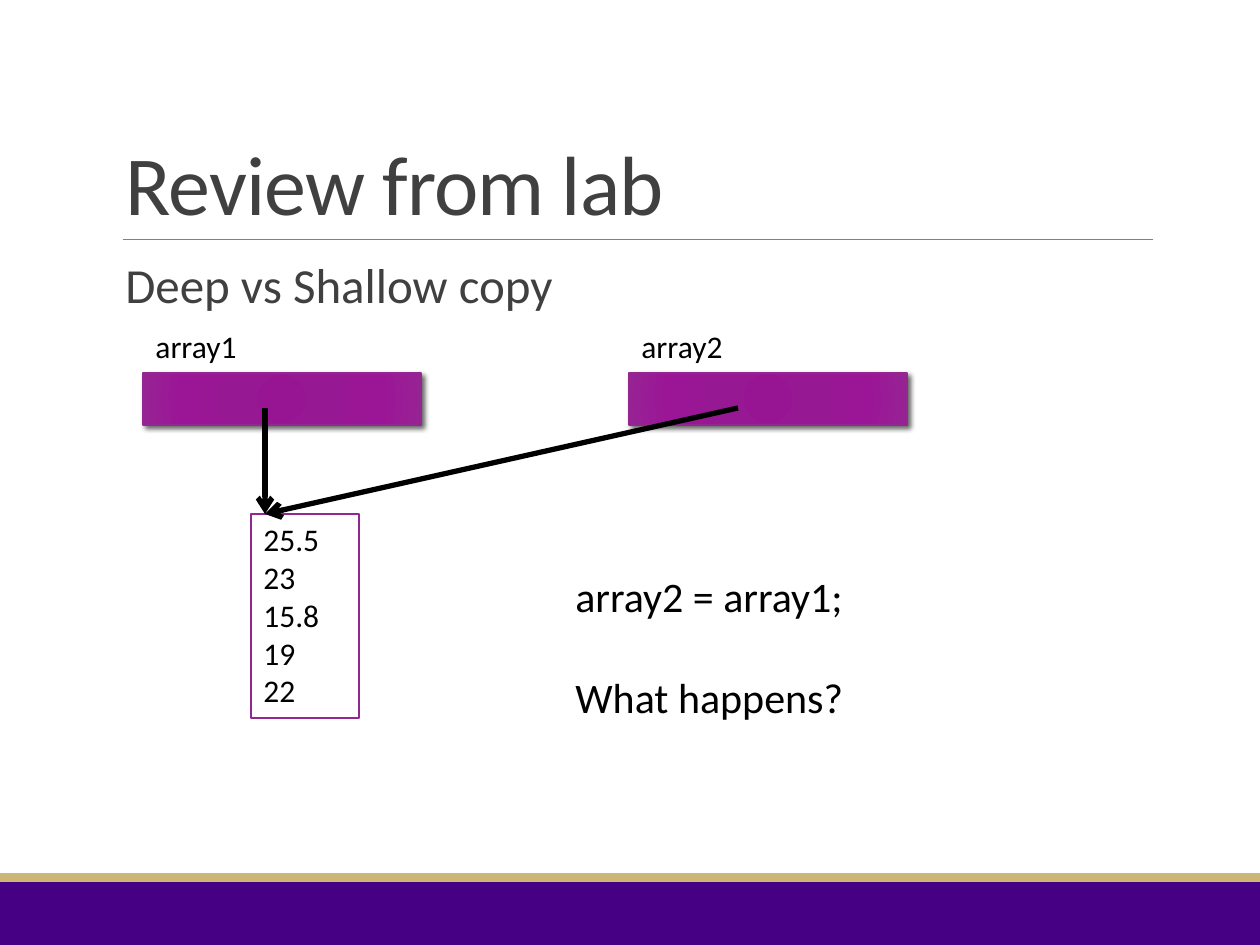
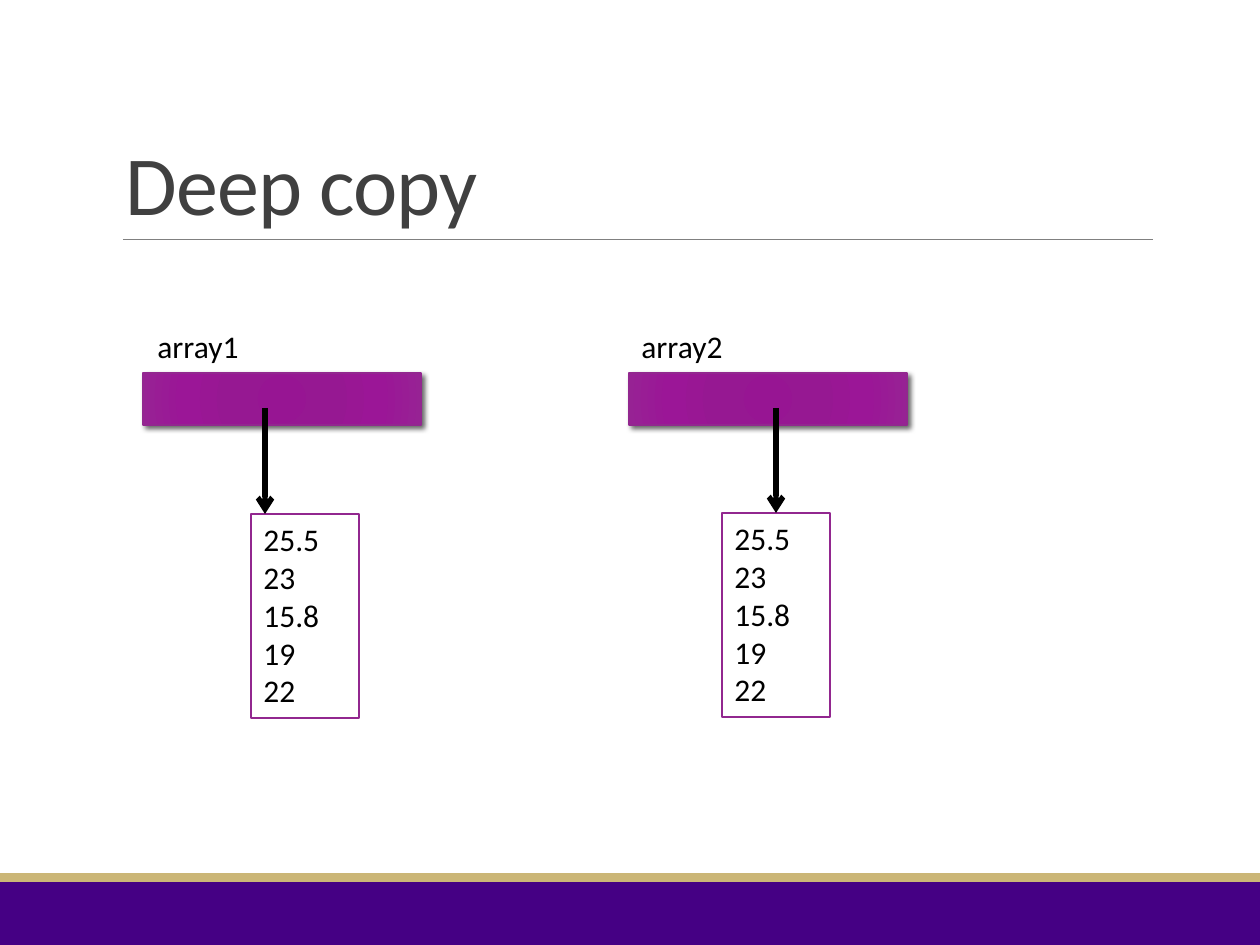
from lxml.etree import SubElement
from pptx import Presentation
from pptx.dml.color import RGBColor
from pptx.enum.shapes import MSO_CONNECTOR, MSO_SHAPE
from pptx.enum.text import MSO_ANCHOR, MSO_AUTO_SIZE, PP_ALIGN
from pptx.oxml import parse_xml
from pptx.oxml.ns import nsdecls, qn
from pptx.util import Pt

EMU_PER_PX = 7257.14
FONT = "Calibri"
COLORS = {
    "band": "450084",
    "stripe": "CBB677",
    "rule": "808080",
    "heading": "404040",
    "text": "000000",
    "outline": "92278F",
}
REFERENCE_GRADIENT = ((0, "971593"), (34, "961892"), (70, "9B1697"), (100, "972294"))
ARRAY_VALUES = ("25.5", "23", "15.8", "19", "22")
SLIDE_WIDTH, SLIDE_HEIGHT = 1260, 945
REFERENCE_TOP, REFERENCE_WIDTH, REFERENCE_HEIGHT = 373, 278, 52
ARRAY1_LEFT, ARRAY2_LEFT = 143, 629
ARROW_TOP, VALUES_TOP = 408, 514
VALUES1_LEFT, VALUES2_LEFT = 251, 722
ARROW1_X = 265


def px(length):
    return round(length * EMU_PER_PX)


def box(*lengths):
    return [px(length) for length in lengths]


def color(name):
    return RGBColor.from_string(COLORS[name])


def format_text(text_frame, size, color_name="text", line_spacing=None):
    for paragraph in text_frame.paragraphs:
        paragraph.alignment = PP_ALIGN.LEFT
        if line_spacing:
            paragraph.line_spacing = line_spacing
        for run in paragraph.runs:
            run.font.name = FONT
            run.font.size = Pt(size)
            run.font.color.rgb = color(color_name)


def add_text(slide, text, bounds, size, color_name="text", line_spacing=None):
    shape = slide.shapes.add_textbox(*box(*bounds))
    text_frame = shape.text_frame
    text_frame.text = text
    text_frame.word_wrap = False
    format_text(text_frame, size, color_name, line_spacing)
    return text_frame


def add_rectangle(slide, bounds, fill=None):
    shape = slide.shapes.add_shape(MSO_SHAPE.RECTANGLE, *box(*bounds))
    shape.shadow.inherit = False
    if fill:
        shape.fill.solid()
        shape.fill.fore_color.rgb = color(fill)
        shape.line.fill.background()
    else:
        shape.fill.background()
    return shape


def add_line(slide, start, end, color_name, width):
    connector = slide.shapes.add_connector(MSO_CONNECTOR.STRAIGHT, *box(*start, *end))
    connector.line.color.rgb = color(color_name)
    connector.line.width = Pt(width)
    SubElement(connector._element.spPr, qn("a:effectLst"))
    return connector


def add_arrow(slide, start, end):
    arrow = add_line(slide, start, end, "text", 3)
    SubElement(arrow.line._get_or_add_ln(), qn("a:tailEnd"), type="arrow")
    return arrow


def add_reference(slide, left):
    shape = add_rectangle(slide, (left, REFERENCE_TOP, REFERENCE_WIDTH, REFERENCE_HEIGHT))
    shape.line.color.rgb = color("outline")
    shape.line.width = Pt(1)
    stops = "".join(
        f'<a:gs pos="{position * 1000}"><a:srgbClr val="{value}"/></a:gs>'
        for position, value in REFERENCE_GRADIENT
    )
    gradient = parse_xml(
        f'<a:gradFill {nsdecls("a")} rotWithShape="1"><a:gsLst>{stops}</a:gsLst>'
        '<a:path path="circle"><a:fillToRect l="100000" t="100000" r="100000" b="100000"/>'
        "</a:path></a:gradFill>"
    )
    properties = shape._element.spPr
    properties.replace(properties.find(qn("a:noFill")), gradient)
    shadow = SubElement(
        properties.find(qn("a:effectLst")), qn("a:outerShdw"),
        blurRad=str(Pt(3)), dist=str(Pt(2)), dir="2700000", rotWithShape="0",
    )
    shadow_color = SubElement(shadow, qn("a:srgbClr"), val=COLORS["text"])
    SubElement(shadow_color, qn("a:alpha"), val="60000")


def add_array(slide, name, left, label_left):
    add_reference(slide, left)
    add_text(slide, name, (label_left, 321, 108, 50), 18)


def add_values(slide, left, top):
    shape = add_rectangle(slide, (left, top, 108, 204))
    shape.line.color.rgb = color("outline")
    shape.line.width = Pt(0.75)
    text_frame = shape.text_frame
    text_frame.text = "\n".join(ARRAY_VALUES)
    text_frame.word_wrap = True
    text_frame.vertical_anchor = MSO_ANCHOR.TOP
    format_text(text_frame, 18)
    return shape


def add_slide(presentation, title_text):
    slide = presentation.slides.add_slide(presentation.slide_layouts[5])
    add_rectangle(slide, (0, 882, SLIDE_WIDTH, 63), "band")
    add_rectangle(slide, (0, 873, SLIDE_WIDTH, 9), "stripe")
    add_line(slide, (123, 239), (1153, 239), "rule", 0.5)
    title = slide.shapes.title
    title.left, title.top, title.width, title.height = box(113, 39, 1040, 200)
    text_frame = title.text_frame
    text_frame.text = title_text
    text_frame.auto_size = MSO_AUTO_SIZE.NONE
    text_frame.vertical_anchor = MSO_ANCHOR.BOTTOM
    format_text(text_frame, 48, "heading", 0.85)
    for run in text_frame.paragraphs[0].runs:
        run.font._element.set("spc", "-50")
    return slide


def build_shallow_copy(presentation):
    slide = add_slide(presentation, "Review from lab")
    subtitle = add_text(slide, "Deep vs Shallow copy", (113, 255, 1040, 83), 28, "heading", 0.9)
    subtitle.word_wrap = True
    add_array(slide, "array1", ARRAY1_LEFT, ARRAY1_LEFT)
    add_array(slide, "array2", ARRAY2_LEFT, ARRAY2_LEFT)
    add_values(slide, VALUES1_LEFT, VALUES_TOP)
    question = add_text(slide, "array2 = array1;\nWhat happens?", (563, 564, 299, 165), 24)
    question.paragraphs[1].space_before = Pt(29)
    for start_x in (ARROW1_X, 738):
        add_arrow(slide, (start_x, ARROW_TOP), (ARROW1_X, VALUES_TOP))


def build_deep_copy(presentation):
    slide = add_slide(presentation, "Deep copy")
    add_array(slide, "array1", ARRAY1_LEFT, 145)
    add_array(slide, "array2", ARRAY2_LEFT, ARRAY2_LEFT)
    add_values(slide, VALUES1_LEFT, VALUES_TOP)
    add_arrow(slide, (ARROW1_X, ARROW_TOP), (ARROW1_X, VALUES_TOP))
    values2_top = VALUES_TOP - 1
    values2 = add_values(slide, VALUES2_LEFT, values2_top)
    arrow2_x = VALUES2_LEFT + 54
    arrow2 = add_arrow(slide, (arrow2_x, ARROW_TOP), (arrow2_x, values2_top))
    arrow2.end_connect(values2, 0)


def main():
    presentation = Presentation()
    presentation.slide_width, presentation.slide_height = box(SLIDE_WIDTH, SLIDE_HEIGHT)
    build_shallow_copy(presentation)
    build_deep_copy(presentation)
    presentation.save("out.pptx")


if __name__ == "__main__":
    main()
